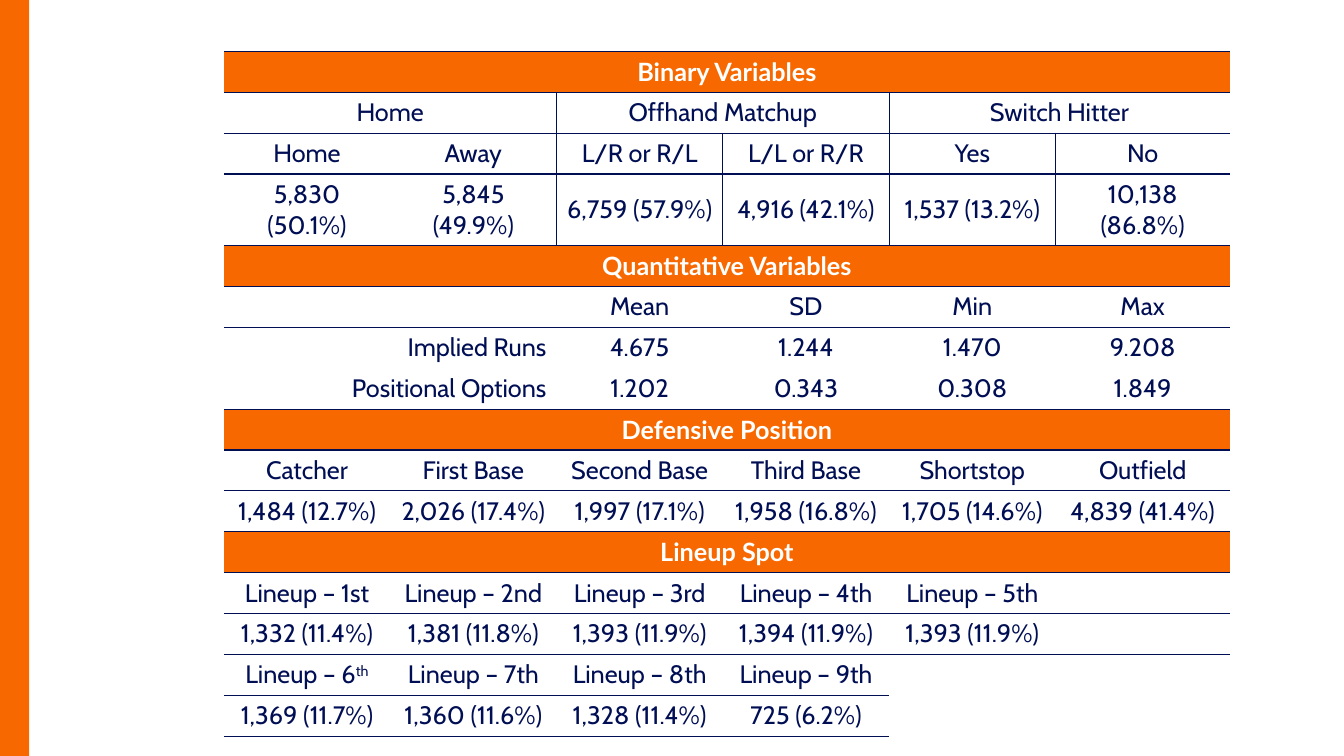
import lxml.etree
import pptx
import pptx.dml.color
import pptx.enum.shapes
import pptx.enum.text
import pptx.oxml.ns
import pptx.util

ORANGE = pptx.dml.color.RGBColor(0xF7, 0x69, 0x00)
NAVY = pptx.dml.color.RGBColor(0x00, 0x0E, 0x54)
WHITE = pptx.dml.color.RGBColor(0xFF, 0xFF, 0xFF)
Inches = pptx.util.Inches
Alignment = pptx.enum.text.PP_ALIGN

BODY_FONT = {"name": "Cabin", "size": pptx.util.Pt(18), "bold": False}
HEADING_FONT = {"name": "Lato", "size": pptx.util.Pt(18), "bold": True}
TIGHT_MARGINS = {
    "margin_left": Inches(0.07),
    "margin_right": Inches(0.07),
    "margin_top": 0,
    "margin_bottom": 0,
}

ROWS = [
    ["Binary Variables"],
    ["Home", "", "Offhand Matchup", "", "Switch Hitter", ""],
    ["Home", "Away", "L/R or R/L", "L/L or R/R", "Yes", "No"],
    ["5,830 (50.1%)", "5,845 (49.9%)", "6,759 (57.9%)", "4,916 (42.1%)", "1,537 (13.2%)", "10,138 (86.8%)"],
    ["Quantitative Variables"],
    ["", "", "Mean", "SD", "Min", "Max"],
    ["Implied Runs", "", "4.675", "1.244", "1.470", "9.208"],
    ["Positional Options", "", "1.202", "0.343", "0.308", "1.849"],
    ["Defensive Position"],
    ["Catcher", "First Base", "Second Base", "Third Base", "Shortstop", "Outfield"],
    ["1,484 (12.7%)", "2,026 (17.4%)", "1,997 (17.1%)", "1,958 (16.8%)", "1,705 (14.6%)", "4,839 (41.4%)"],
    ["Lineup Spot"],
    ["Lineup – 1st", "Lineup – 2nd", "Lineup – 3rd", "Lineup – 4th", "Lineup – 5th"],
    ["1,332 (11.4%)", "1,381 (11.8%)", "1,393 (11.9%)", "1,394 (11.9%)", "1,393 (11.9%)"],
    ["Lineup – 6^th", "Lineup – 7th", "Lineup – 8th", "Lineup – 9th"],
    ["1,369 (11.7%)", "1,360 (11.6%)", "1,328 (11.4%)", "725 (6.2%)"],
]
COLUMN_WIDTHS = [1.65] * 5 + [1.73]
COLUMN_COUNT = len(COLUMN_WIDTHS)
PAIRED_COLUMNS = {1: (0, 2, 4), 6: (0,), 7: (0,)}
RIGHT_ALIGNED_ROWS = (6, 7)
LINEUP_START = 12
RIGHT_RULES = {1: (1, 3), 2: (1, 2, 3, 4), 3: (1, 2, 3, 4)}
OPEN_BELOW = {6: range(COLUMN_COUNT), 14: (4, 5), 15: (4, 5)}


def set_attributes(target, values):
    """Set each named attribute of the target."""
    for name, value in values.items():
        setattr(target, name, value)


def has_rule_below(row, column):
    """Tell whether a rule runs under this cell; row -1 is the table top."""
    return column not in OPEN_BELOW.get(row, ())


def has_rule_right(row, column):
    """Tell whether a rule runs to the right of this cell."""
    return column in RIGHT_RULES.get(row, ())


def add_borders(cell, row, column):
    """Draw the four borders of a cell, solid or empty."""
    sides = {
        "lnL": has_rule_right(row, column - 1),
        "lnR": has_rule_right(row, column),
        "lnT": has_rule_below(row - 1, column),
        "lnB": has_rule_below(row, column),
    }
    qualified = pptx.oxml.ns.qn
    properties = cell._tc.get_or_add_tcPr()
    for side, visible in sides.items():
        line = lxml.etree.SubElement(properties, qualified(f"a:{side}"), w=str(pptx.util.Pt(1)))
        if visible:
            fill = lxml.etree.SubElement(line, qualified("a:solidFill"))
            lxml.etree.SubElement(fill, qualified("a:srgbClr"), val=str(NAVY))
        else:
            lxml.etree.SubElement(line, qualified("a:noFill"))


def write_cell(cell, text, alignment, font, color):
    """Write text in a cell, raising whatever follows a caret."""
    paragraph = cell.text_frame.paragraphs[0]
    paragraph.alignment = alignment
    for index, part in enumerate(text.split("^")):
        run = paragraph.add_run()
        run.text = part
        set_attributes(run.font, font)
        run.font.color.rgb = color
        if index:
            run._r.get_or_add_rPr().set("baseline", "30000")


def format_cell(cell, row, column):
    """Give a cell its borders, fill, margins and text."""
    heading = len(ROWS[row]) == 1
    add_borders(cell, row, column)
    cell.vertical_anchor = pptx.enum.text.MSO_ANCHOR.MIDDLE
    if heading:
        cell.fill.solid()
        cell.fill.fore_color.rgb = ORANGE
    else:
        cell.fill.background()
    if row >= LINEUP_START:
        set_attributes(cell, TIGHT_MARGINS)
    text = ROWS[row][column] if column < len(ROWS[row]) else ""
    if text:
        to_right = row in RIGHT_ALIGNED_ROWS and column == 0
        alignment = Alignment.RIGHT if to_right else Alignment.CENTER
        font, color = (HEADING_FONT, WHITE) if heading else (BODY_FONT, NAVY)
        write_cell(cell, text, alignment, font, color)


def add_variable_table(slide, left, top, width, height):
    """Add the table of variable summaries in the given box."""
    frame = slide.shapes.add_table(len(ROWS), COLUMN_COUNT, left, top, width, height)
    table = frame.table
    set_attributes(table, {"first_row": False, "horz_banding": False})
    for column, share in zip(table.columns, COLUMN_WIDTHS):
        column.width = int(width * share / sum(COLUMN_WIDTHS))
    for row, texts in enumerate(ROWS):
        for column in range(COLUMN_COUNT):
            format_cell(table.cell(row, column), row, column)
        if len(texts) == 1:
            table.cell(row, 0).merge(table.cell(row, COLUMN_COUNT - 1))
        for column in PAIRED_COLUMNS.get(row, ()):
            table.cell(row, column).merge(table.cell(row, column + 1))


def add_side_bar(slide, left, top, width, height):
    """Add the plain coloured bar in the given box."""
    bar = slide.shapes.add_shape(
        pptx.enum.shapes.MSO_SHAPE.RECTANGLE, left, top, width, height
    )
    bar.shadow.inherit = False
    bar.fill.solid()
    bar.fill.fore_color.rgb = ORANGE
    bar.line.fill.background()


def main():
    """Build and save the presentation."""
    presentation = pptx.Presentation()
    presentation.slide_width = Inches(13.33)
    presentation.slide_height = Inches(7.5)
    slide = presentation.slides.add_slide(presentation.slide_layouts[6])
    add_side_bar(slide, 0, 0, Inches(0.29), presentation.slide_height)
    add_variable_table(
        slide, Inches(2.22), Inches(0.51), Inches(sum(COLUMN_WIDTHS)), Inches(6.49)
    )
    presentation.save("out.pptx")


if __name__ == "__main__":
    main()
